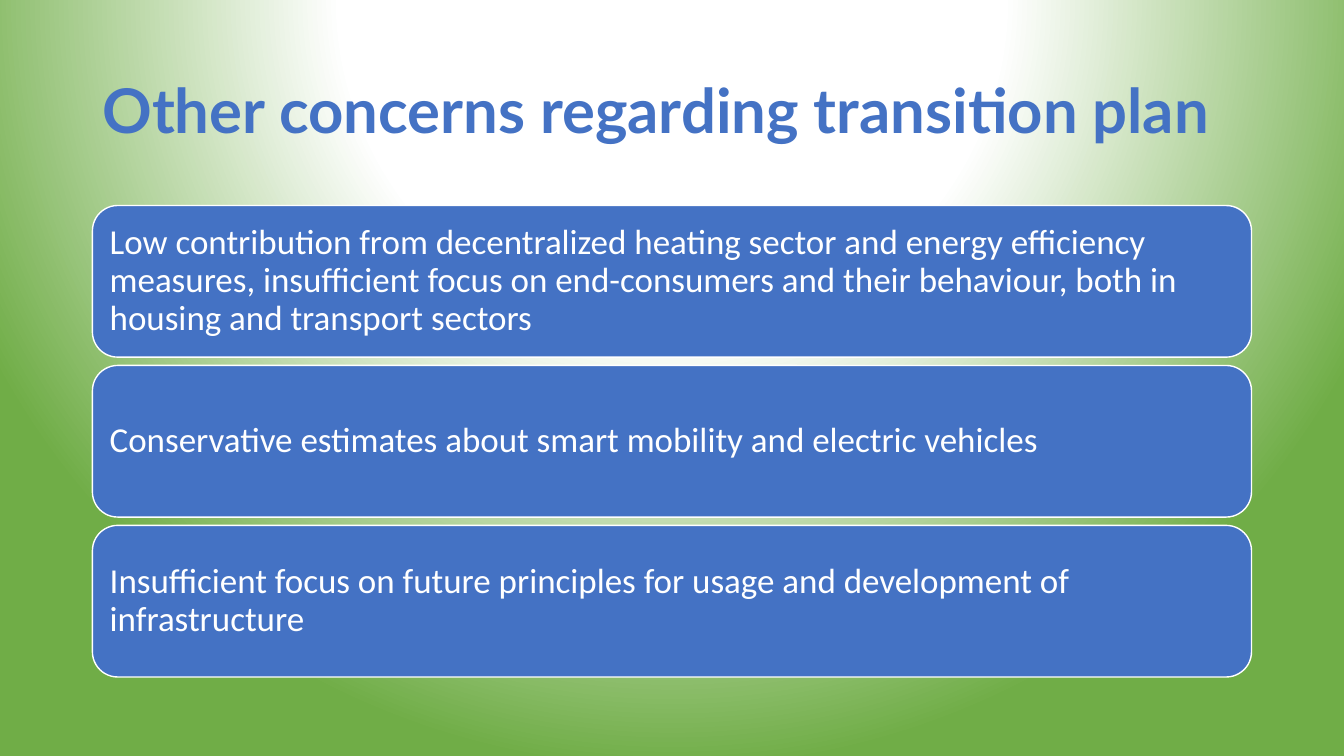
from lxml import etree
from pptx import Presentation
from pptx.dml.color import RGBColor
from pptx.enum.shapes import MSO_SHAPE
from pptx.enum.text import MSO_ANCHOR, MSO_AUTO_SIZE, PP_ALIGN
from pptx.oxml import parse_xml
from pptx.oxml.ns import nsdecls, qn
from pptx.util import Cm, Pt

TITLE = "Other concerns regarding transition plan"
CONCERNS = [
    "Low contribution from decentralized heating sector and energy efficiency "
    "measures, insufficient focus on end-consumers and their behaviour, both in "
    "housing and transport sectors",
    "Conservative estimates about smart mobility and electric vehicles",
    "Insufficient focus on future principles for usage and development of "
    "infrastructure",
]

BLUE = RGBColor(0x44, 0x72, 0xC4)
GREEN = RGBColor(0x70, 0xAD, 0x47)
WHITE = RGBColor(0xFF, 0xFF, 0xFF)
GRADIENT_STOPS = [(0, WHITE), (43, WHITE), (100, GREEN)]
GRADIENT_FOCUS = {"l": 50, "t": -80, "r": 50, "b": 180}

ROUNDED = MSO_SHAPE.ROUNDED_RECTANGLE
MIDDLE = MSO_ANCHOR.MIDDLE
LEFT = PP_ALIGN.LEFT
NO_FIT = MSO_AUTO_SIZE.NONE

MARGIN, CONTENT_WIDTH = Cm(2.33), Cm(29.21)
TITLE_TOP, TITLE_HEIGHT = Cm(1.01), Cm(3.68)
CARDS_TOP, CARD_HEIGHT, CARD_GAP = Cm(5.18), Cm(3.82), Cm(0.21)
INSET = Cm(0.25)


def paint_background(page):
    page.background.fill.gradient()
    gradient = page.element.find(".//" + qn("a:gradFill"))
    for child in list(gradient):
        gradient.remove(child)
    stops = etree.SubElement(gradient, qn("a:gsLst"))
    for percent, color in GRADIENT_STOPS:
        stop = etree.SubElement(stops, qn("a:gs"), pos=str(percent * 1000))
        etree.SubElement(stop, qn("a:srgbClr"), val=str(color))
    focus = " ".join(f'{side}="{value * 1000}"' for side, value in GRADIENT_FOCUS.items())
    gradient.append(parse_xml(
        f'<a:path {nsdecls("a")} path="circle"><a:fillToRect {focus}/></a:path>'))


def write_text(shape, text, font_name, size, color, bold=False):
    frame = shape.text_frame
    frame.text = text
    frame.word_wrap = True
    frame.auto_size = NO_FIT
    frame.vertical_anchor = MIDDLE
    frame.margin_left = frame.margin_right = INSET
    para = frame.paragraphs[0]
    para.alignment = LEFT
    para.line_spacing = 0.9
    font = para.runs[0].font
    font.name, font.size, font.bold = font_name, Pt(size), bold
    font.color.rgb = color


def add_card(page, index, text):
    top = CARDS_TOP + index * (CARD_HEIGHT + CARD_GAP)
    card = page.shapes.add_shape(ROUNDED, MARGIN, top, CONTENT_WIDTH, CARD_HEIGHT)
    card.shadow.inherit = False
    card.fill.solid()
    card.fill.fore_color.rgb = BLUE
    card.line.color.rgb = WHITE
    card.line.width = Pt(1)
    write_text(card, text, "Calibri", 25, WHITE)


def main():
    deck = Presentation()
    deck.slide_width, deck.slide_height = Cm(33.87), Cm(19.05)
    page = deck.slides.add_slide(deck.slide_layouts[5])
    paint_background(page)

    title = page.shapes.title
    title.left, title.top = MARGIN, TITLE_TOP
    title.width, title.height = CONTENT_WIDTH, TITLE_HEIGHT
    write_text(title, TITLE, "Lato", 44, BLUE, bold=True)

    for index, concern in enumerate(CONCERNS):
        add_card(page, index, concern)

    deck.save("out.pptx")


if __name__ == "__main__":
    main()
